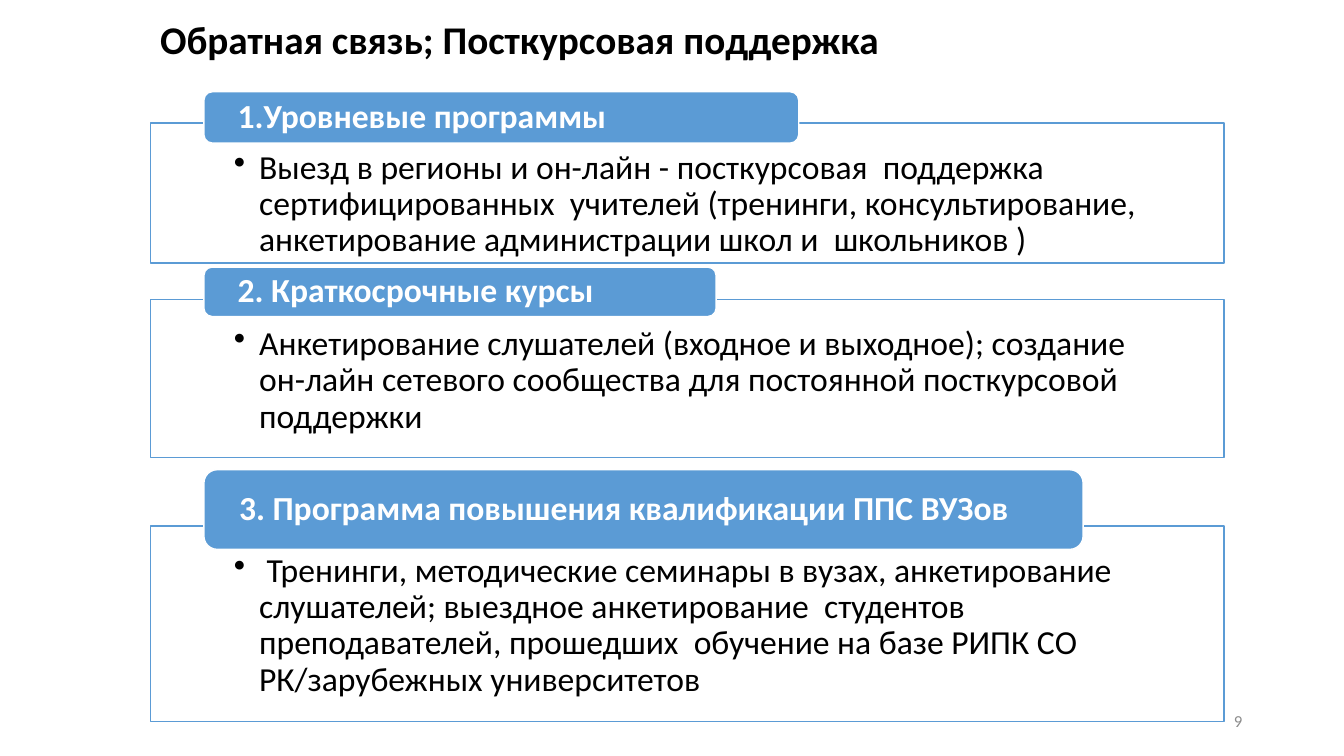
"""Build the slide on feedback and post-course support."""
from lxml import etree
from pptx import Presentation
from pptx.dml.color import RGBColor
from pptx.enum.shapes import MSO_SHAPE
from pptx.enum.text import MSO_ANCHOR, PP_ALIGN
from pptx.oxml.ns import qn
from pptx.util import Inches, Pt

RECT, ROUNDED = MSO_SHAPE.RECTANGLE, MSO_SHAPE.ROUNDED_RECTANGLE
TOP, MIDDLE, BOTTOM = MSO_ANCHOR.TOP, MSO_ANCHOR.MIDDLE, MSO_ANCHOR.BOTTOM
LEFT, RIGHT = PP_ALIGN.LEFT, PP_ALIGN.RIGHT

COLORS = {"blue": "5B9BD5", "white": "FFFFFF", "black": "000000", "gray": "8C8C8C"}
FONT = "Calibri"
SLIDE_W, SLIDE_H = 13.33, 7.5

TITLE = "Обратная связь; Посткурсовая поддержка"
PAGE_NUMBER = "9"
SECTIONS = [
    {"heading": "1.Уровневые программы",
     "detail": "Выезд в регионы и он-лайн - посткурсовая  поддержка сертифицированных  учителей "
               "(тренинги, консультирование, анкетирование администрации школ и  школьников )",
     "heading_top": 0.91, "heading_size": (5.9, 0.51), "detail_top": 1.22, "detail_height": 1.39},
    {"heading": "2. Краткосрочные курсы",
     "detail": "Анкетирование слушателей (входное и выходное); создание он-лайн сетевого "
               "сообщества для постоянной посткурсовой поддержки",
     "heading_top": 2.65, "heading_size": (5.08, 0.49), "detail_top": 2.97, "detail_height": 1.57},
    {"heading": "3. Программа повышения квалификации ППС ВУЗов",
     "detail": " Тренинги, методические семинары в вузах, анкетирование слушателей; выездное "
               "анкетирование  студентов преподавателей, прошедших  обучение на базе "
               "РИПК СО РК/зарубежных университетов",
     "heading_top": 4.66, "heading_size": (8.72, 0.79), "detail_top": 5.22, "detail_height": 1.94},
]

MARGIN = 1.49
DETAIL_W = 10.65
HEADING_LEFT = MARGIN + DETAIL_W * 0.05
DETAIL_INSETS = (0.83, 0.27, 0.83, 0.19)
HEADING_INSETS = (0.31, 0.03, 0.31, 0.03)
PLAIN_INSETS = (0.1, 0.05, 0.1, 0.05)


def color(name):
    return RGBColor.from_string(COLORS[name])


def write(holder, text, size, ink, bold=False, anchor=TOP, align=LEFT,
          insets=PLAIN_INSETS, spacing=0.9):
    frame = holder.text_frame
    frame.word_wrap = True
    frame.vertical_anchor = anchor
    (frame.margin_left, frame.margin_top,
     frame.margin_right, frame.margin_bottom) = map(Inches, insets)
    paragraph = frame.paragraphs[0]
    paragraph.text = text
    paragraph.alignment = align
    paragraph.line_spacing = spacing
    font = paragraph.font
    font.name, font.size, font.bold = FONT, Pt(size), bold
    font.color.rgb = color(ink)
    return paragraph


def add_bullet(paragraph, indent=0.25):
    properties = paragraph._p.get_or_add_pPr()
    properties.set("marL", str(Inches(indent)))
    properties.set("indent", str(-Inches(indent)))
    bullet = etree.Element(qn("a:buChar"), char="•")
    properties.find(qn("a:defRPr")).addprevious(bullet)


def add_box(slide, kind, box, fill, outline):
    shape = slide.shapes.add_shape(kind, *map(Inches, box))
    shape.shadow.inherit = False
    shape.fill.solid()
    shape.fill.fore_color.rgb = color(fill)
    shape.line.color.rgb = color(outline)
    shape.line.width = Pt(1)
    return shape


def add_section(slide, section):
    detail = add_box(slide, RECT, (MARGIN, section["detail_top"], DETAIL_W,
                                   section["detail_height"]), "white", "blue")
    add_bullet(write(detail, section["detail"], 24, "black", insets=DETAIL_INSETS))
    heading = add_box(slide, ROUNDED, (HEADING_LEFT, section["heading_top"],
                                       *section["heading_size"]), "blue", "white")
    write(heading, section["heading"], 24, "white", bold=True, anchor=MIDDLE,
          insets=HEADING_INSETS)


def main():
    deck = Presentation()
    deck.slide_width, deck.slide_height = Inches(SLIDE_W), Inches(SLIDE_H)
    slide = deck.slides.add_slide(deck.slide_layouts[6])
    for section in SECTIONS:
        add_section(slide, section)
    title = slide.shapes.add_textbox(*map(Inches, (MARGIN, 0.28, 9.02, 0.39)))
    write(title, TITLE, 28, "black", bold=True, anchor=BOTTOM)
    page = slide.shapes.add_textbox(*map(Inches, (9.42, 6.95, 3, 0.4)))
    write(page, PAGE_NUMBER, 12, "gray", anchor=MIDDLE, align=RIGHT, spacing=1.0)
    deck.save("out.pptx")


if __name__ == "__main__":
    main()
